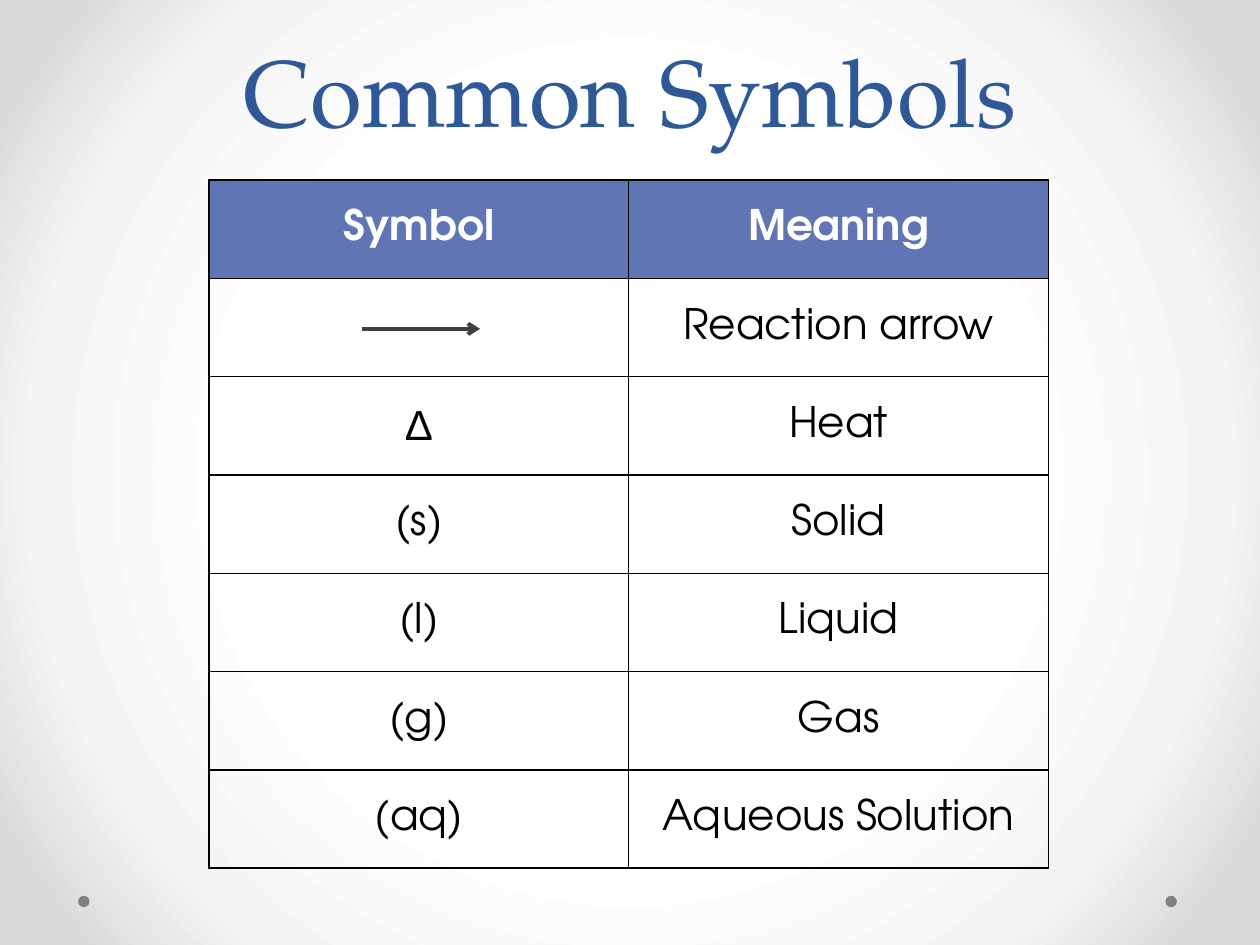
from lxml import etree
from pptx import Presentation
from pptx import util as u
from pptx.dml.color import RGBColor
from pptx.enum import shapes, text
from pptx.oxml import parse_xml
from pptx.oxml.ns import nsdecls, qn

COLORS = {"title": "2F5897", "head": "6076B4", "white": "FFFFFF",
          "black": "000000", "dot": "808080", "arrow": "404040",
          "mid": "F4F4F4", "edge": "DADADA"}
BODY = "TeX Gyre Adventor"
ROWS = [("Symbol", "Meaning"), ("", "Reaction arrow"), ("Δ", "Heat"),
        ("(s)", "Solid"), ("(l)", "Liquid"), ("(g)", "Gas"),
        ("(aq)", "Aqueous Solution")]


def rgb(name):
    return RGBColor.from_string(COLORS[name])


def put(frame, words, color, **form):
    par = frame.paragraphs[0]
    par.alignment = text.PP_ALIGN.CENTER
    run = par.add_run()
    run.text = words
    run.font.color.rgb = rgb(color)
    for key, val in form.items():
        setattr(run.font, key, val)
    return par


def shade(slide):
    slide.background.fill.solid()
    prop = slide.background._cSld.bg.bgPr
    stops = "".join(
        f'<a:gs pos="{pos * 1000}"><a:srgbClr val="{COLORS[name]}"/></a:gs>'
        for pos, name in ((50, "white"), (76, "mid"), (92, "edge")))
    grad = parse_xml(
        f'<a:gradFill {nsdecls("a")} rotWithShape="1"><a:gsLst>{stops}</a:gsLst>'
        '<a:path path="circle"><a:fillToRect l="50000" t="50000" r="50000" '
        'b="50000"/></a:path></a:gradFill>')
    prop.replace(prop[0], grad)


def dot(slide, left):
    size = u.Inches(0.09)
    mark = slide.shapes.add_shape(shapes.MSO_SHAPE.OVAL, u.Inches(left),
                                  u.Inches(7.11), size, size)
    mark.shadow.inherit = False
    mark.fill.solid()
    mark.fill.fore_color.rgb = rgb("dot")
    mark.line.fill.background()


def title(slide):
    box = slide.shapes.add_textbox(u.Inches(0.5), 0, u.Inches(9), u.Inches(1.21))
    frame = box.text_frame
    frame.word_wrap = True
    frame.vertical_anchor = text.MSO_ANCHOR.BOTTOM
    par = put(frame, "Common Symbols", "title", name="TeX Gyre Pagella",
              size=u.Pt(54))
    par.line_spacing = u.Pt(58)


def edge(cell):
    prop = cell._tc.get_or_add_tcPr()
    for side in "LRTB":
        prop.append(parse_xml(
            f'<a:ln{side} {nsdecls("a")} w="{u.Pt(1)}"><a:solidFill>'
            f'<a:srgbClr val="{COLORS["black"]}"/></a:solidFill></a:ln{side}>'))


def grid(slide):
    high, wide = u.Inches(0.78), u.Inches(3.33)
    table = slide.shapes.add_table(
        len(ROWS), 2, u.Inches(1.66), u.Inches(1.43), wide * 2,
        high * len(ROWS)).table
    table.horz_banding = False
    for col in table.columns:
        col.width = wide
    for row, (line, words) in enumerate(zip(table.rows, ROWS)):
        line.height = high
        head = row == 0
        for cell, word in zip(line.cells, words):
            cell.vertical_anchor = text.MSO_ANCHOR.MIDDLE
            edge(cell)
            if head:
                cell.fill.solid()
                cell.fill.fore_color.rgb = rgb("head")
            else:
                cell.fill.background()
            if word:
                put(cell.text_frame, word, "white" if head else "black",
                    name="Arial" if word == "Δ" else BODY,
                    size=u.Pt(24), bold=head)


def arrow(slide):
    y = u.Inches(2.61)
    line = slide.shapes.add_connector(shapes.MSO_CONNECTOR.STRAIGHT,
                                      u.Inches(2.87), y, u.Inches(3.81), y)
    line.line.width = u.Pt(2.25)
    line.line.color.rgb = rgb("arrow")
    etree.SubElement(line.line._get_or_add_ln(), qn("a:tailEnd"), type="arrow")
    etree.SubElement(line._element.spPr, qn("a:effectLst"))


def main():
    deck = Presentation()
    deck.slide_width, deck.slide_height = u.Inches(10), u.Inches(7.5)
    slide = deck.slides.add_slide(deck.slide_layouts[6])
    shade(slide)
    for left in (9.25, 0.62):
        dot(slide, left)
    title(slide)
    grid(slide)
    arrow(slide)
    deck.save("out.pptx")


if __name__ == "__main__":
    main()
